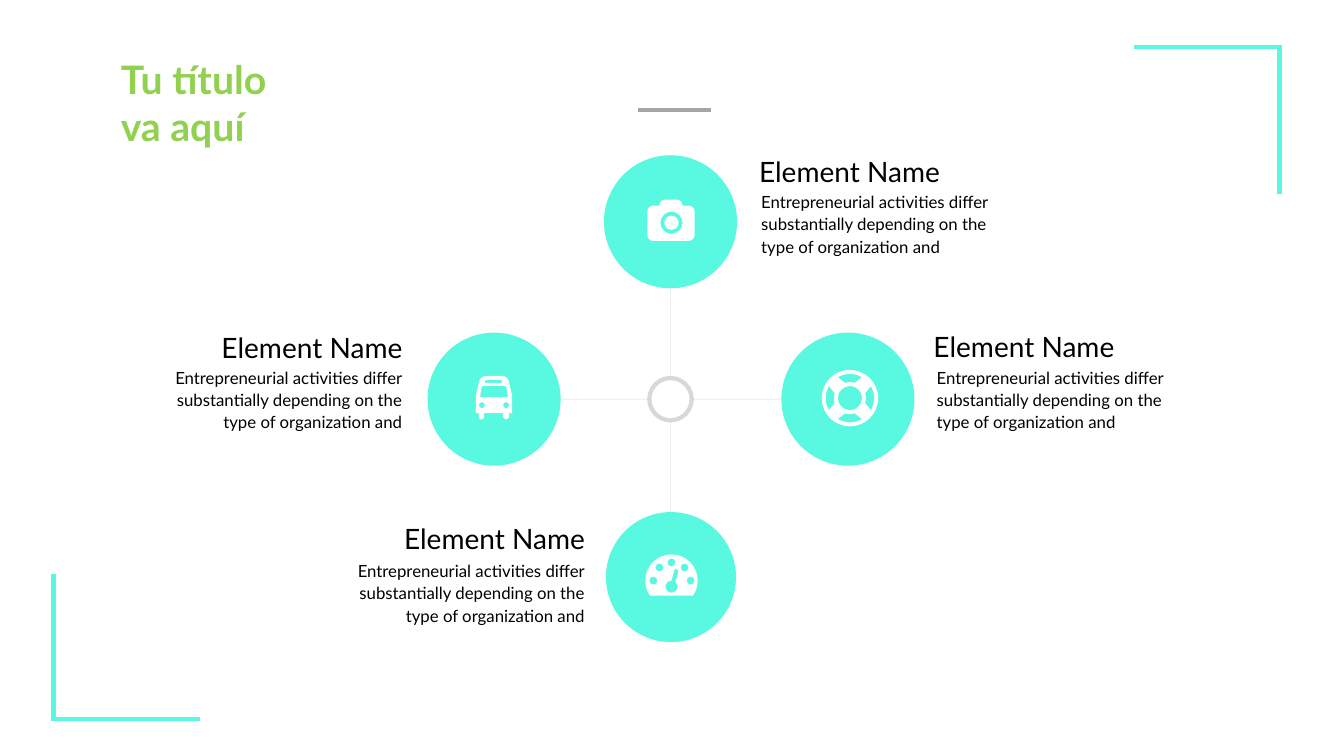
import math
import typing

import pptx
import pptx.dml.color
import pptx.enum.shapes
import pptx.enum.text
import pptx.oxml.ns
import pptx.shapes.base
import pptx.shapes.shapetree
import pptx.util
from lxml import etree

SCALE = 9144  # EMU in one px, 100 px to the inch
RGB = pptx.dml.color.RGBColor
AQUA = RGB(0x59, 0xF8, 0xE0)
GREEN = RGB(0x92, 0xD0, 0x50)
GRAY = RGB(0xA5, 0xA5, 0xA5)
SILVER = RGB(0xB2, 0xB2, 0xB2)
WHITE = RGB(0xFF, 0xFF, 0xFF)
BLACK = RGB(0x00, 0x00, 0x00)
FONT = "Lato"
LABEL = "Element Name"
BODY = ("Entrepreneurial activities differ substantially depending on "
        "the type of organization and")
LEFT = pptx.enum.text.PP_ALIGN.LEFT
RIGHT = pptx.enum.text.PP_ALIGN.RIGHT

Point = tuple[float, float]
Outline = list[tuple[Point, ...]]  # one point draws a line, three a curve
Tree = pptx.shapes.shapetree._BaseGroupShapes


class Box(typing.NamedTuple):
    x: int
    y: int
    w: int
    h: int


class Item(typing.NamedTuple):
    disc: Box
    label: Box
    body: Box
    align: pptx.enum.text.PP_ALIGN
    icon: list[Outline]


class Rule(typing.NamedTuple):
    x1: int
    y1: int
    x2: int
    y2: int


def px(size: float) -> pptx.util.Emu:
    return pptx.util.Emu(round(size * SCALE))


def arc(x: float, y: float, r: float, start: int = 0, end: int = 360) -> Outline:
    """Curves along a circle, angles in degrees clockwise from the right."""
    low, high = sorted((start, end))
    inner = [a for a in range(-360, 721, 90) if low < a < high]
    stops = [low, *inner, high]
    turns = [math.radians(a) for a in (stops if start < end else stops[::-1])]
    outline: Outline = [((x + r * math.cos(turns[0]), y + r * math.sin(turns[0])),)]
    for a, b in zip(turns, turns[1:]):
        k = 4 / 3 * math.tan((b - a) / 4)
        outline.append((
            (x + r * (math.cos(a) - k * math.sin(a)), y + r * (math.sin(a) + k * math.cos(a))),
            (x + r * (math.cos(b) + k * math.sin(b)), y + r * (math.sin(b) - k * math.cos(b))),
            (x + r * math.cos(b), y + r * math.sin(b))))
    return outline


def bend(corners: list[tuple[int, int, int]]) -> Outline:
    """Polygon whose corners (x, y, radius) are rounded off."""
    outline: Outline = []
    for i, (x, y, r) in enumerate(corners):
        if r == 0:
            outline.append(((x, y),))
            continue
        ends, pulls = [], []
        for nx, ny, _ in (corners[i - 1], corners[(i + 1) % len(corners)]):
            part = r / math.dist((x, y), (nx, ny))
            dx, dy = (nx - x) * part, (ny - y) * part
            ends.append((x + dx, y + dy))
            pulls.append((x + dx * 0.45, y + dy * 0.45))
        outline += [(ends[0],), (pulls[0], pulls[1], ends[1])]
    return outline


def band(x: int, y: int, mid: int) -> Outline:
    """Flared slot of the life ring, centred on the angle mid."""
    return arc(x, y, 24, mid - 30, mid + 30) + arc(x, y, 16, mid + 18, mid - 18)


CAMERA = [
    bend([(642, 204, 6), (654, 204, 0), (656, 198, 3), (675, 198, 3),
          (677, 204, 0), (689, 204, 6), (689, 239, 6), (642, 239, 6)]),
    arc(666, 221, 11), arc(666, 221, 7),
]
BUS = [
    bend([(472, 410, 0), (472, 392, 2), (475, 380, 0), (475, 373, 7),
          (505, 373, 7), (505, 380, 0), (508, 392, 2), (508, 410, 0),
          (505, 410, 0), (505, 416, 3), (499, 416, 3), (499, 410, 0),
          (480, 410, 0), (480, 416, 2), (475, 416, 2), (475, 410, 0)]),
    bend([(478, 383, 1), (502, 383, 1), (504, 394, 1), (476, 394, 1)]),
    bend([(481, 377, 1), (498, 377, 1), (498, 380, 1), (481, 380, 1)]),
    arc(478, 402, 3), arc(502, 402, 3),
]
RING = [arc(843, 395, 28), arc(843, 395, 12)]
RING += [band(843, 395, mid) for mid in range(0, 360, 90)]
GAUGE = [arc(666, 576, 26, 145, 395)]
GAUGE += [arc(x, y, 4) for x, y in
          ((648, 576), (654, 563), (666, 558), (679, 563), (685, 576))]
GAUGE.append(arc(666, 582, 6, -50, 270) + [((669, 565),), ((671, 564),), ((673, 567),)])

ITEMS = [
    Item(Box(424, 330, 132, 132), Box(161, 323, 248, 44),
         Box(151, 362, 248, 67), RIGHT, BUS),
    Item(Box(601, 508, 129, 129), Box(342, 512, 248, 44),
         Box(332, 554, 248, 67), RIGHT, GAUGE),
    Item(Box(775, 330, 132, 132), Box(916, 322, 355, 44),
         Box(929, 362, 248, 67), LEFT, RING),
    Item(Box(599, 154, 132, 132), Box(743, 148, 355, 44),
         Box(755, 188, 248, 67), LEFT, CAMERA),
]
SPOKES = [Rule(686, 396, 775, 396), Rule(665, 417, 665, 508),
          Rule(644, 396, 556, 396), Rule(665, 375, 665, 286)]
FRAMES = [
    [Rule(53, 569, 53, 715), Rule(198, 713, 51, 713)],
    [Rule(1269, 192, 1269, 45), Rule(1125, 47, 1272, 47)],
]


def fade(shape: pptx.shapes.base.BaseShape) -> None:
    """Make the outline half transparent."""
    color = shape.element.spPr.find("/".join(map(pptx.oxml.ns.qn, (
        "a:ln", "a:solidFill", "a:srgbClr"))))
    etree.SubElement(color, pptx.oxml.ns.qn("a:alpha"), val="50000")


def draw_rule(shapes: Tree, rule: Rule, color: RGB, width: float,
              faint: bool = False) -> None:
    line = shapes.add_connector(pptx.enum.shapes.MSO_CONNECTOR.STRAIGHT, *map(px, rule))
    line.line.color.rgb = color
    line.line.width = pptx.util.Pt(width)
    etree.SubElement(line.element.spPr, pptx.oxml.ns.qn("a:effectLst"))
    if faint:
        fade(line)


def paint(shape: pptx.shapes.base.BaseShape, color: RGB) -> None:
    shape.shadow.inherit = False
    shape.fill.solid()
    shape.fill.fore_color.rgb = color
    shape.line.fill.background()


def draw_disc(shapes: Tree, box: Box) -> pptx.shapes.base.BaseShape:
    disc = shapes.add_shape(pptx.enum.shapes.MSO_SHAPE.OVAL, *map(px, box))
    paint(disc, AQUA)
    return disc


def draw_hub(shapes: Tree, box: Box) -> None:
    hub = draw_disc(shapes, box)
    hub.fill.background()
    hub.line.color.rgb = SILVER
    hub.line.width = pptx.util.Pt(3)
    fade(hub)


def draw_icon(shapes: Tree, icon: list[Outline]) -> None:
    """Fill nested outlines as one shape, the inner ones as holes."""
    paths = [[(px(x), px(y)) for part in line for x, y in part] for line in icon]
    pen = shapes.build_freeform(*paths[0][0])
    for i, points in enumerate(paths):
        if i:
            pen.move_to(*points[0])
        pen.add_line_segments(points[1:])
    shape = pen.convert_to_shape()
    paint(shape, WHITE)
    steps = iter(list(shape.element.iter(pptx.oxml.ns.qn("a:lnTo"))))
    for part in (part for line in icon for part in line[1:]):
        group = [next(steps) for _ in part]
        if len(group) == 3:
            curve = etree.Element(pptx.oxml.ns.qn("a:cubicBezTo"))
            group[0].addprevious(curve)
            for step in group:
                curve.append(step[0])
                step.getparent().remove(step)


def write(shapes: Tree, box: Box, lines: list[str], size: int, color: RGB = BLACK,
          align: pptx.enum.text.PP_ALIGN = LEFT,
          bold: bool = False) -> pptx.text.text.TextFrame:
    frame = shapes.add_textbox(*map(px, box)).text_frame
    frame.word_wrap = True
    for i, line in enumerate(lines):
        para = frame.add_paragraph() if i else frame.paragraphs[0]
        para.alignment = align
        run = para.add_run()
        run.text = line
        run.font.name, run.font.size = FONT, pptx.util.Pt(size)
        run.font.bold = bold
        run.font.color.rgb = color
    return frame


def write_body(shapes: Tree, item: Item) -> None:
    frame = write(shapes, item.body, [BODY], 12, align=item.align)
    frame.vertical_anchor = pptx.enum.text.MSO_ANCHOR.MIDDLE
    frame.margin_left = frame.margin_right = frame.margin_top = frame.margin_bottom = 0
    frame.paragraphs[0].line_spacing = 1.1
    frame.paragraphs[0].space_before = pptx.util.Pt(15)


def main() -> None:
    deck = pptx.Presentation()
    deck.slide_width, deck.slide_height = px(1333), px(750)
    shapes = deck.slides.add_slide(deck.slide_layouts[6]).shapes
    draw_rule(shapes, Rule(705, 109, 633, 109), GRAY, 3)
    for item in ITEMS:
        draw_disc(shapes, item.disc)
        draw_icon(shapes, item.icon)
        write_body(shapes, item)
        write(shapes, item.label, [LABEL], 20, align=item.align)
    draw_hub(shapes, Box(644, 375, 42, 42))
    for spoke in SPOKES:
        draw_rule(shapes, spoke, SILVER, 0.25, faint=True)
    write(shapes, Box(110, 50, 302, 104), ["Tu título", "va aquí"], 28, GREEN, bold=True)
    for frame in FRAMES:
        group = shapes.add_group_shape()
        for rule in frame:
            draw_rule(group.shapes, rule, AQUA, 3)
    deck.save("out.pptx")


if __name__ == "__main__":
    main()
